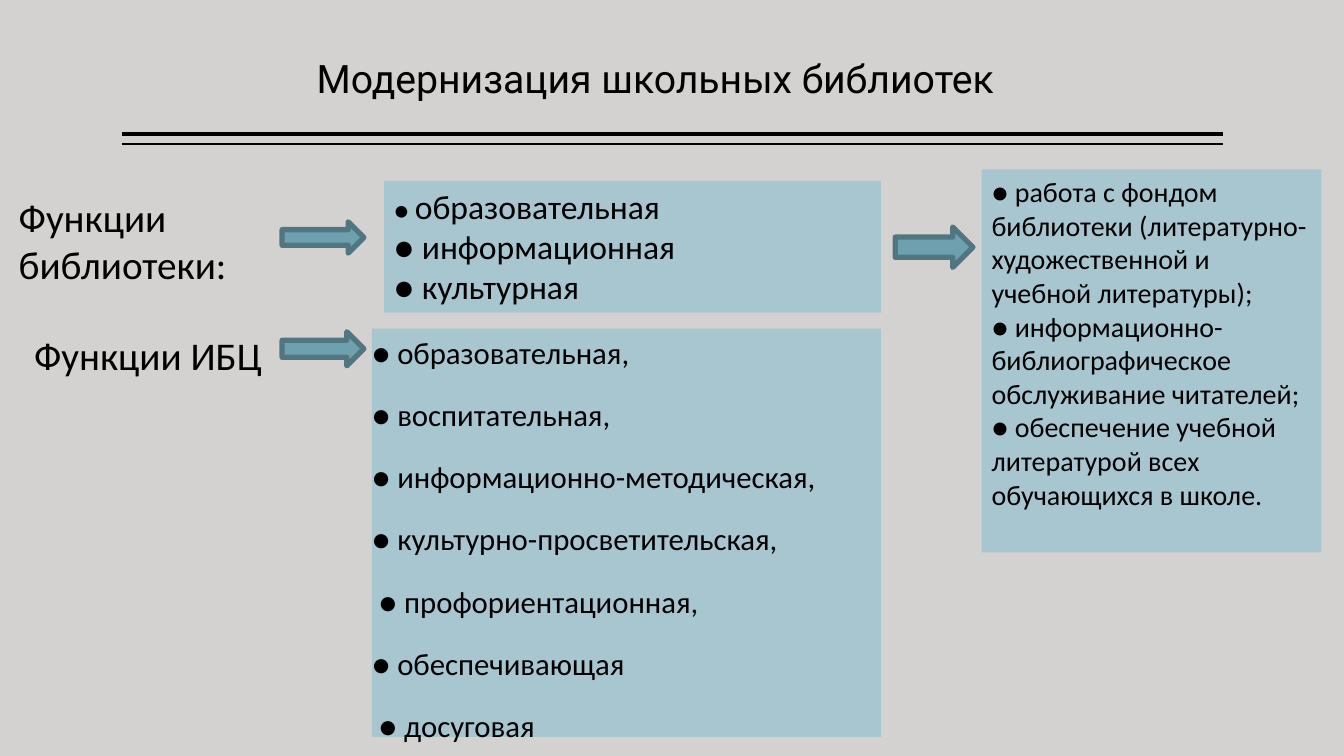
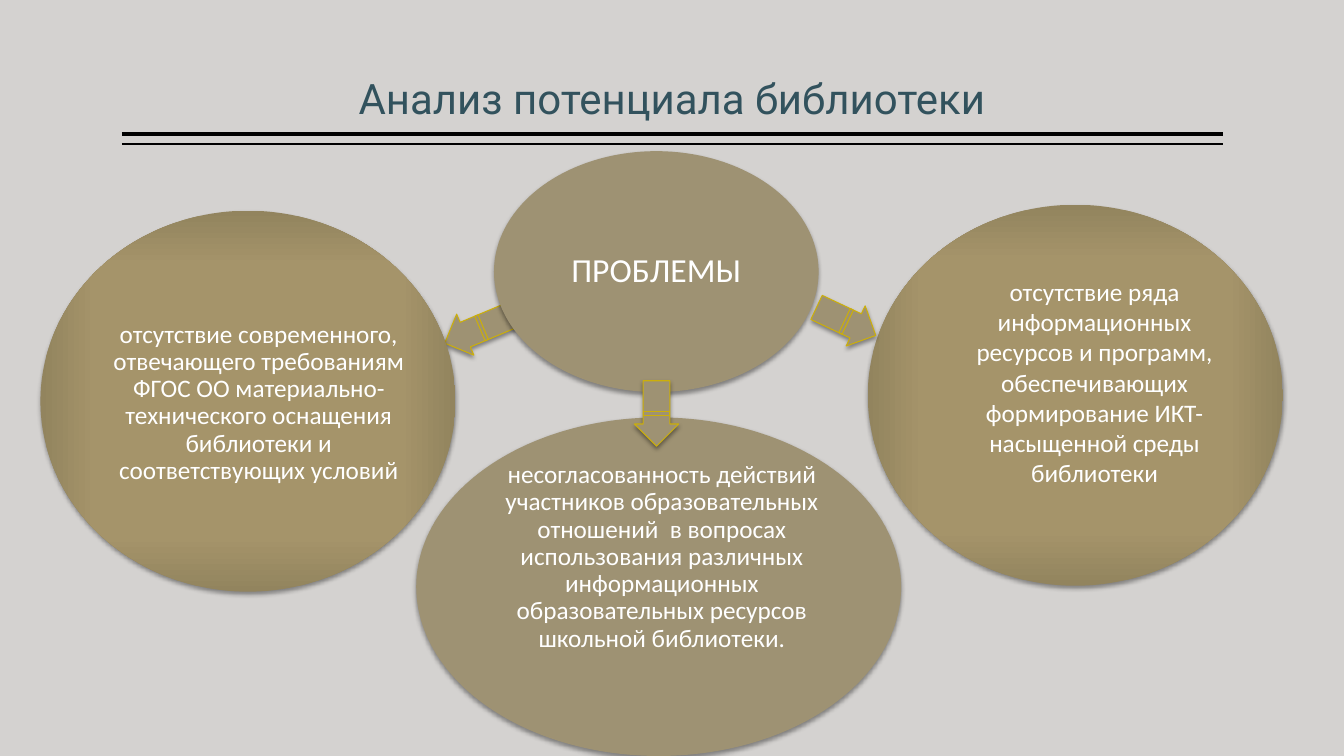
import pptx
import pptx.util
import pptx.dml.color
import pptx.enum.shapes
import pptx.enum.text
import pptx.oxml
import pptx.oxml.ns

Cm, Pt = pptx.util.Cm, pptx.util.Pt
Shape = pptx.enum.shapes.MSO_SHAPE
Align = pptx.enum.text.PP_ALIGN
Anchor = pptx.enum.text.MSO_ANCHOR

# Shared look
BACKGROUND, BLACK, WHITE = "D4D2D0", "000000", "FFFFFF"
TEAL, PANEL, ARROW, ARROW_EDGE = "32525D", "A8C6D0", "6EA0B0", "517682"
OLIVE, GOLD = "9E9273", "CCAF0A"
OLIVE_GRADIENT = [(0, "A6966B"), (71, "A5946A"), (100, "92845E")]
BODY_FONT, TITLE_FONT = "Calibri", "Roboto"
RULE_LEFT, RULE_RIGHT = 3.07, 30.81
RULES = [(3.38, 3), (3.63, 1)]  # height on the slide, width in points
NORMAL, NO_SIDES, TIGHT = (0.25, 0.13), (0, 0.13), (0.05, 0.05)

# Slide 1 content: box in cm, paragraphs, format
FUNCTIONS_TITLE = "Модернизация школьных библиотек"
FUNCTION_BLOCKS = [
    ((0.86, 8.23, 9.55, 3.4), ["Функции ИБЦ"], dict(size=28, insets=NO_SIDES)),
    ((9.37, 8.28, 12.83, 10.29),
     ["● образовательная,", "● воспитательная,", "● информационно-методическая,",
      "● культурно-просветительская,", " ● профориентационная,",
      "● обеспечивающая", " ● досуговая"],
     dict(size=22, fill=PANEL, insets=NO_SIDES, before=18)),
    ((0, 4.75, 6.6, 2.64), [" Функции", " библиотеки:"], dict(size=28)),
    ((9.68, 4.55, 12.52, 3.33),
     [[("● ", 18), ("образовательная", 24)], "● информационная", "● культурная"],
     dict(size=24, fill=PANEL)),
    ((24.74, 4.27, 8.56, 9.65),
     ["● работа с фондом библиотеки (литературно-художественной и учебной литературы);",
      "● информационно-библиографическое обслуживание читателей;",
      "● обеспечение учебной литературой всех обучающихся в школе."],
     dict(size=20, fill=PANEL)),
]
FUNCTION_ARROWS = [(7.11, 8.36, 2.06, 0.86), (7.11, 5.59, 2.06, 0.79),
                   (22.56, 5.72, 1.96, 1.02)]

# Slide 2 content
PROBLEMS_TITLE = "Анализ потенциала библиотеки"
SIDE_ELLIPSES = [(21.87, 5.16, 10.46, 9.6), (1.02, 5.31, 10.46, 9.6)]
LOWER_ELLIPSE = (10.49, 10.52, 12.22, 8.53)
CENTRE_ELLIPSE = (12.45, 3.81, 8.18, 6.07)
LEFT_ARROW = (11.13, 7.7, 2.01, 1.12, 157.3)
OTHER_ARROWS = [(15.72, 9.86, 1.65, 1.12, 90), (20.5, 7.54, 1.65, 1.12, 25.3)]
PROBLEMS = [
    ((2.29, 7.24, 8.46, 5.84),
     "отсутствие современного, отвечающего требованиям ФГОС ОО "
     "материально-технического оснащения библиотеки и соответствующих условий",
     dict(insets=TIGHT, anchor=Anchor.MIDDLE, spacing=0.9)),
    ((23.98, 6.83, 7.21, 5.64),
     "отсутствие ряда информационных ресурсов и программ, обеспечивающих "
     "формирование ИКТ-насыщенной среды библиотеки", {}),
    ((12.45, 11.51, 8.46, 6.48),
     "несогласованность действий участников образовательных отношений  в вопросах "
     "использования различных информационных образовательных ресурсов "
     "школьной библиотеки.", dict(spacing=0.9)),
]


def color(hex_string):
    return pptx.dml.color.RGBColor.from_string(hex_string)


def add_xml(shape, content, before=None):
    """Put DrawingML into the shape properties, ahead of a given tag or last."""
    element = pptx.oxml.parse_xml(
        content.replace(">", " %s>" % pptx.oxml.ns.nsdecls("a"), 1))
    properties = shape.element.spPr
    following = None if before is None else properties.find(pptx.oxml.ns.qn(before))
    if following is None:
        properties.append(element)
    else:
        following.addprevious(element)


def write(frame, paragraphs, size=18, font=BODY_FONT, ink=BLACK, align=Align.LEFT,
          anchor=Anchor.TOP, insets=NORMAL, before=0, spacing=None):
    frame.word_wrap = True
    frame.vertical_anchor = anchor
    frame.margin_left = frame.margin_right = Cm(insets[0])
    frame.margin_top = frame.margin_bottom = Cm(insets[1])
    for index, spans in enumerate(paragraphs):
        para = frame.paragraphs[0] if index == 0 else frame.add_paragraph()
        para.alignment = align
        para.space_before = Pt(before)
        if spacing:
            para.line_spacing = spacing
        for text, points in [(spans, size)] if isinstance(spans, str) else spans:
            span = para.add_run()
            span.text = text
            span.font.size, span.font.name = Pt(points), font
            span.font.color.rgb = color(ink)


def add_shape(page, kind, place, fill, edge=None, edge_width=0.75, rotation=0):
    shape = page.shapes.add_shape(kind, *map(Cm, place))
    shape.shadow.inherit = False
    shape.rotation = rotation
    shape.fill.solid()
    shape.fill.fore_color.rgb = color(fill)
    if edge:
        shape.line.color.rgb = color(edge)
        shape.line.width = Pt(edge_width)
    else:
        shape.line.fill.background()
    return shape


def add_text(page, place, paragraphs, fill=None, **style):
    if fill:
        box = add_shape(page, Shape.RECTANGLE, place, fill)
    else:
        box = page.shapes.add_textbox(*map(Cm, place))
    write(box.text_frame, paragraphs, **style)


def drop_shadow(shape):
    effects = shape.element.spPr.find(pptx.oxml.ns.qn("a:effectLst"))
    shape.element.spPr.remove(effects)
    add_xml(shape, '<a:effectLst><a:outerShdw blurRad="%d" dist="%d" dir="5400000" '
            'rotWithShape="0"><a:srgbClr val="%s"><a:alpha val="38000"/></a:srgbClr>'
            '</a:outerShdw></a:effectLst>' % (Pt(3.1), Pt(2), BLACK))


def add_ellipse(page, place, gradient=None):
    ellipse = add_shape(page, Shape.OVAL, place, OLIVE)
    drop_shadow(ellipse)
    if gradient:
        ellipse.element.spPr.remove(
            ellipse.element.spPr.find(pptx.oxml.ns.qn("a:solidFill")))
        stops = "".join('<a:gs pos="%d"><a:srgbClr val="%s"/></a:gs>'
                        % (position * 1000, shade) for position, shade in gradient)
        add_xml(ellipse, '<a:gradFill><a:gsLst>%s</a:gsLst><a:path path="rect">'
                '<a:fillToRect l="50000" t="50000" r="50000" b="50000"/></a:path>'
                '</a:gradFill>' % stops, before="a:ln")
    return ellipse


def add_barred_arrow(page, left, top, width, height, rotation):
    """Olive arrow with a thin bar across its middle."""
    arrow = add_shape(page, Shape.RIGHT_ARROW, (left, top, width, height),
                      OLIVE, GOLD, rotation=rotation)
    arrow.adjustments[0], arrow.adjustments[1] = 0.6, 0.5
    drop_shadow(arrow)
    bar_width, bar_height = 0.09, height * 0.6
    place = (left + (width - bar_width) / 2, top + (height - bar_height) / 2,
             bar_width, bar_height)
    add_shape(page, Shape.RECTANGLE, place, OLIVE, GOLD, rotation=rotation)


def add_page(deck):
    """Blank page with the double rule under the title."""
    page = deck.slides.add_slide(deck.slide_layouts[6])
    for height, width in RULES:
        rule = page.shapes.add_connector(
            pptx.enum.shapes.MSO_CONNECTOR.STRAIGHT,
            Cm(RULE_LEFT), Cm(height), Cm(RULE_RIGHT), Cm(height))
        rule.line.color.rgb = color(BLACK)
        rule.line.width = Pt(width)
        add_xml(rule, "<a:effectLst></a:effectLst>")
    return page


def add_title(page, place, text, **style):
    add_text(page, place, [text], font=TITLE_FONT, anchor=Anchor.BOTTOM,
             insets=NO_SIDES, spacing=0.9, **style)


def build_functions(deck):
    page = add_page(deck)
    add_title(page, (7.98, 0.76, 22.83, 1.93), FUNCTIONS_TITLE, size=28)
    for place, paragraphs, style in FUNCTION_BLOCKS:
        add_text(page, place, paragraphs, **style)
    for place in FUNCTION_ARROWS:
        add_shape(page, Shape.RIGHT_ARROW, place, ARROW, ARROW_EDGE, 3.78)


def build_problems(deck):
    page = add_page(deck)
    add_title(page, (RULE_LEFT, 0.84, RULE_RIGHT - RULE_LEFT, 2.41), PROBLEMS_TITLE,
              size=30, ink=TEAL, align=Align.CENTER)
    # The left arrow starts behind the centre ellipse
    add_barred_arrow(page, *LEFT_ARROW)
    for place in SIDE_ELLIPSES:
        add_ellipse(page, place, OLIVE_GRADIENT)
    add_ellipse(page, LOWER_ELLIPSE)
    centre = add_ellipse(page, CENTRE_ELLIPSE)
    write(centre.text_frame, ["ПРОБЛЕМЫ"], size=24, ink=WHITE, align=Align.CENTER,
          anchor=Anchor.MIDDLE, insets=TIGHT, spacing=0.9)
    for place in OTHER_ARROWS:
        add_barred_arrow(page, *place)
    for place, text, style in PROBLEMS:
        add_text(page, place, [text], ink=WHITE, align=Align.CENTER, **style)


def main():
    deck = pptx.Presentation()
    deck.slide_width, deck.slide_height = Cm(33.87), Cm(19.05)
    backdrop = deck.slide_master.background.fill
    backdrop.solid()
    backdrop.fore_color.rgb = color(BACKGROUND)
    build_functions(deck)
    build_problems(deck)
    deck.save("out.pptx")


if __name__ == "__main__":
    main()
